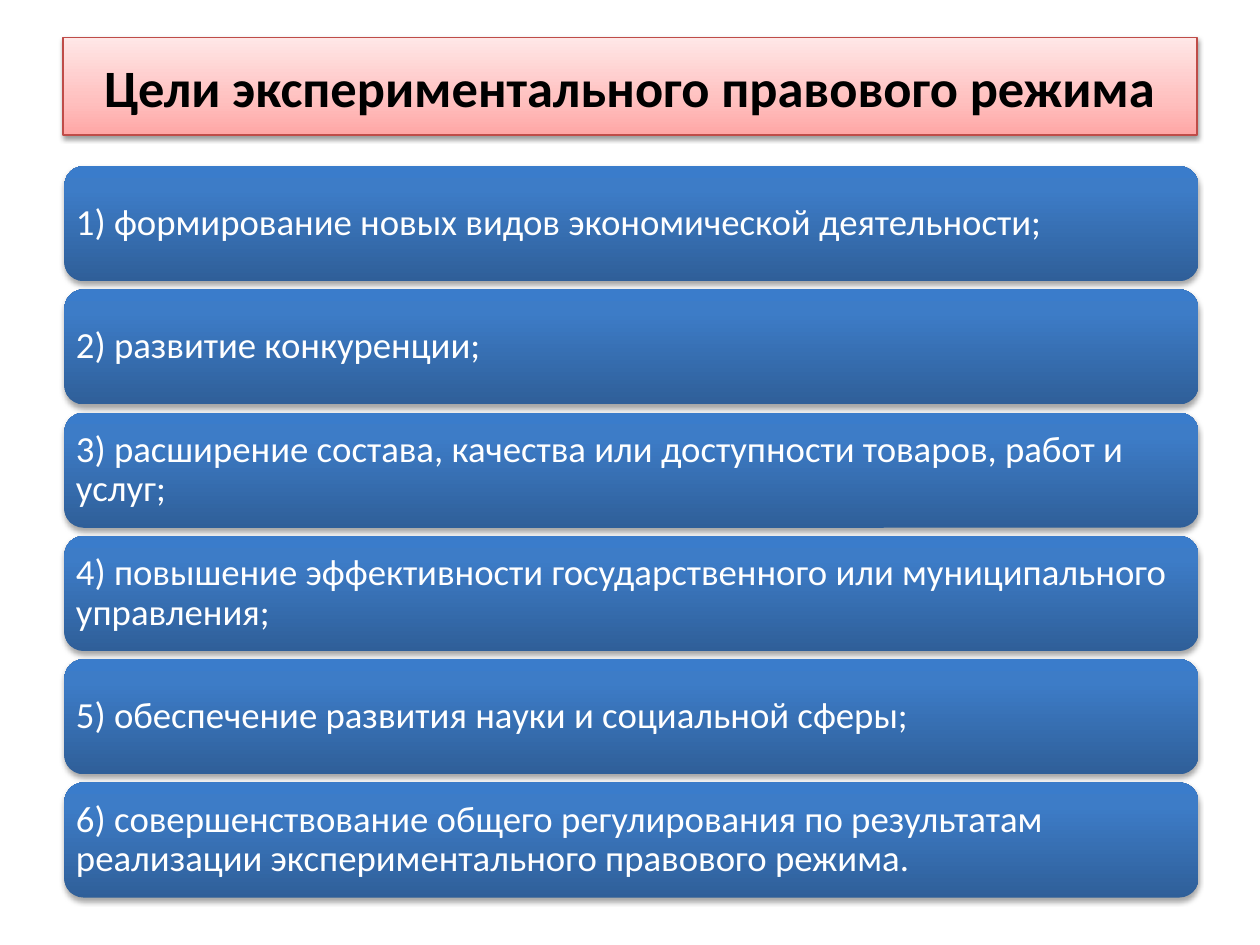
import pptx
import pptx.util
import pptx.dml.color
import pptx.enum.shapes
import pptx.enum.text
import pptx.oxml
import pptx.oxml.ns

Cm = pptx.util.Cm
Pt = pptx.util.Pt

HEADING = "Цели экспериментального правового режима"
GOALS = [
    "1) формирование новых видов экономической деятельности;",
    "2) развитие конкуренции;",
    "3) расширение состава, качества или доступности товаров, работ и услуг;",
    "4) повышение эффективности государственного или муниципального управления;",
    "5) обеспечение развития науки и социальной сферы;",
    "6) совершенствование общего регулирования по результатам реализации "
    "экспериментального правового режима.",
]

THEME = {
    "font": "Calibri",
    "heading": {
        "size": 30, "bold": True, "color": "000000",
        "gradient": [(0, "FFA6A5"), (35, "FFC0BF"), (100, "FFE7E7")],
        "shadow": {"opacity": 38, "distance": 1.6},
        "line": "BF4C48",
    },
    "goal": {
        "size": 21, "bold": False, "color": "FFFFFF",
        "gradient": [(0, "2F5F99"), (80, "3D7CC7"), (100, "3A7CCB")],
        "shadow": {"opacity": 35, "distance": 1.8},
        "line": None,
    },
}

LEFT, WIDTH = 1.3, 22.86
GOALS_TOP, GOAL_HEIGHT, GOAL_PITCH = 3.35, 2.32, 2.485


def paint(box, style):
    box.fill.gradient()
    box.fill.gradient_angle = 90
    stops = box.fill._fill._gradFill.gsLst
    for stop in list(stops):
        stops.remove(stop)
    namespace = pptx.oxml.ns.nsdecls("a")
    for position, color in style["gradient"]:
        stops.append(pptx.oxml.parse_xml(
            f'<a:gs {namespace} pos="{position * 1000}"><a:srgbClr val="{color}"/></a:gs>'))

    if style["line"]:
        box.line.color.rgb = pptx.dml.color.RGBColor.from_string(style["line"])
        box.line.width = Pt(0.75)
    else:
        box.line.fill.background()

    box.shadow.inherit = False
    effects = box._element.spPr.find(pptx.oxml.ns.qn("a:effectLst"))
    shadow = style["shadow"]
    effects.append(pptx.oxml.parse_xml(
        f'<a:outerShdw {namespace} blurRad="{Pt(3.1)}" dist="{Pt(shadow["distance"])}" '
        f'dir="5400000" rotWithShape="0"><a:srgbClr val="000000">'
        f'<a:alpha val="{shadow["opacity"] * 1000}"/></a:srgbClr></a:outerShdw>'))


def write(box, wording, style, alignment):
    frame = box.text_frame
    frame.word_wrap = True
    frame.auto_size = pptx.enum.text.MSO_AUTO_SIZE.NONE
    frame.vertical_anchor = pptx.enum.text.MSO_ANCHOR.MIDDLE
    paragraph = frame.paragraphs[0]
    paragraph.alignment = alignment
    run = paragraph.add_run()
    run.text = wording
    run.font.name = THEME["font"]
    run.font.size = Pt(style["size"])
    run.font.bold = style["bold"]
    run.font.color.rgb = pptx.dml.color.RGBColor.from_string(style["color"])
    return paragraph


def main():
    deck = pptx.Presentation()
    deck.slide_width, deck.slide_height = Cm(25.4), Cm(19.05)
    slide = deck.slides.add_slide(deck.slide_layouts[5])

    heading = slide.shapes.title
    heading.left, heading.top = Cm(1.27), Cm(0.76)
    heading.width, heading.height = Cm(WIDTH), Cm(1.96)
    paint(heading, THEME["heading"])
    write(heading, HEADING, THEME["heading"], pptx.enum.text.PP_ALIGN.CENTER)

    for index, wording in enumerate(GOALS):
        goal = slide.shapes.add_shape(
            pptx.enum.shapes.MSO_SHAPE.ROUNDED_RECTANGLE,
            Cm(LEFT), Cm(GOALS_TOP + index * GOAL_PITCH), Cm(WIDTH), Cm(GOAL_HEIGHT))
        paint(goal, THEME["goal"])
        goal.text_frame.margin_left = goal.text_frame.margin_right = Cm(0.12)
        paragraph = write(goal, wording, THEME["goal"], pptx.enum.text.PP_ALIGN.LEFT)
        paragraph.line_spacing = 0.9

    deck.save("out.pptx")


if __name__ == "__main__":
    main()
